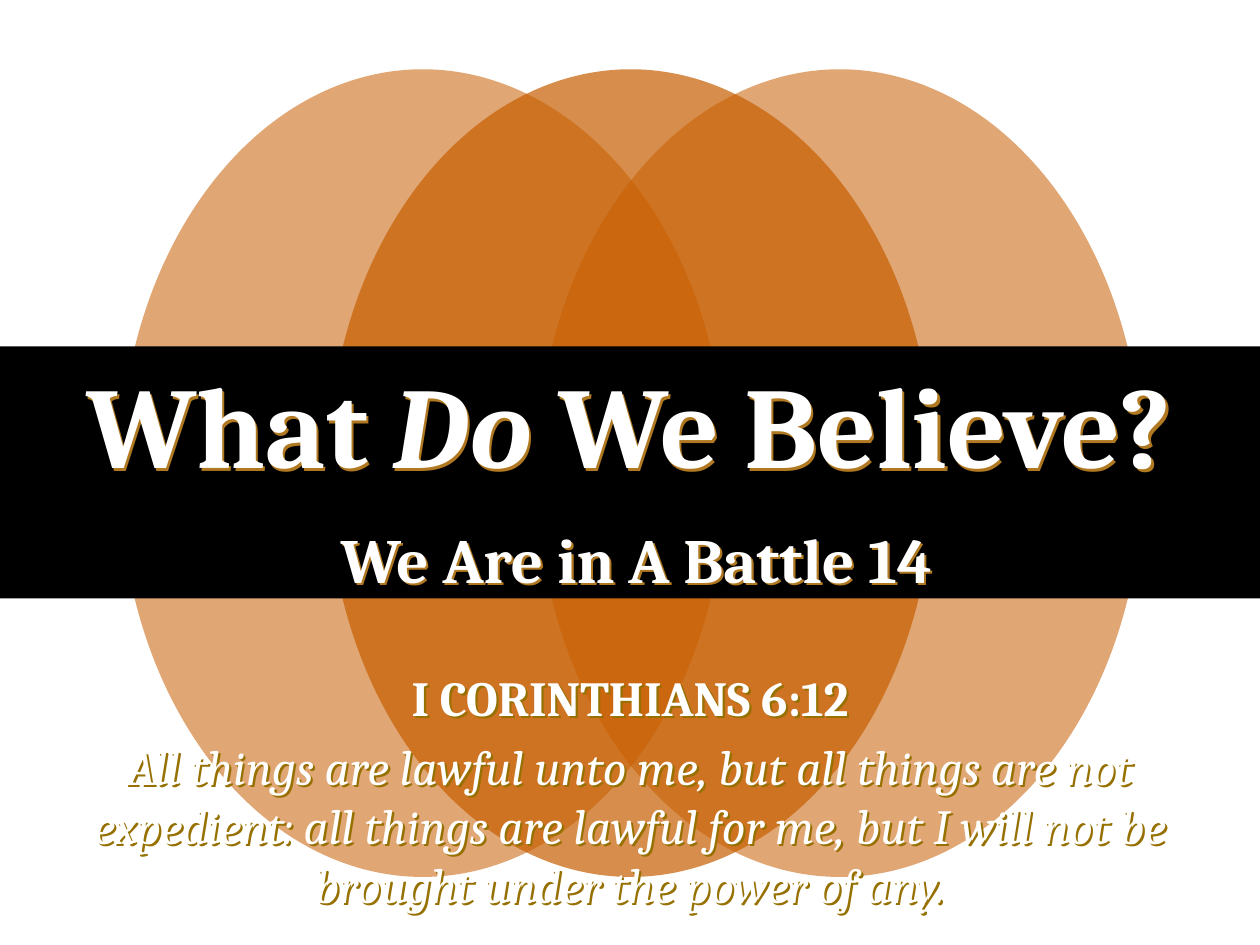
from lxml import etree
from pptx import Presentation
from pptx.dml.color import RGBColor
from pptx.enum import shapes, text
from pptx.oxml import ns
from pptx.util import Inches, Pt


def paint(fill, color, opacity=100):
    fill.solid()
    fill.fore_color.rgb = RGBColor.from_string(color)
    if opacity < 100:
        node = fill._xPr.find(ns.qn("a:solidFill"))[0]
        etree.SubElement(node, ns.qn("a:alpha"), val=str(opacity * 1000))


def place(box, left, top, width, height, shadow_color):
    """Position a placeholder in front and give its text a shadow."""
    box.left, box.top = Inches(left), Inches(top)
    box.width, box.height = Inches(width), Inches(height)
    page.shapes._spTree.append(box._element)
    effects = etree.SubElement(box._element.spPr, ns.qn("a:effectLst"))
    shadow = etree.SubElement(effects, ns.qn("a:outerShdw"),
                              dist="22000", dir="2700000", algn="ctr", rotWithShape="0")
    etree.SubElement(shadow, ns.qn("a:srgbClr"), val=shadow_color)
    box.text_frame.word_wrap = True
    box.text_frame.auto_size = text.MSO_AUTO_SIZE.NONE


deck = Presentation()
deck.slide_width, deck.slide_height = Inches(10), Inches(7.5)
page = deck.slides.add_slide(deck.slide_layouts[0])
paint(page.background.fill, "FFFFFF")

# Overlapping ellipses, the middle one in front
ellipses = page.shapes.add_group_shape()
for left, opacity in [(0.95, 55), (4.26, 55), (2.6, 70)]:
    ellipse = ellipses.shapes.add_shape(shapes.MSO_SHAPE.OVAL, Inches(left), Inches(0.55),
                                        Inches(4.81), Inches(6.41))
    ellipse.shadow.inherit = False
    ellipse.line.fill.background()
    paint(ellipse.fill, "C75E00", opacity)

# Black band
band = page.shapes.add_shape(shapes.MSO_SHAPE.RECTANGLE, 0, Inches(2.75), Inches(10), Inches(2))
band.shadow.inherit = False
band.line.fill.background()
paint(band.fill, "000000")

# Title and series line
title = page.shapes.title
place(title, 0.08, 3.08, 9.83, 1.51, "B07820")
title.text_frame.vertical_anchor = text.MSO_ANCHOR.MIDDLE
heading = title.text_frame.paragraphs[0]
for words, italic in [("What ", False), ("Do", True), (" We Believe?", False)]:
    span = heading.add_run()
    span.text = words
    span.font.italic = italic
series = title.text_frame.add_paragraph()
series.text = " We Are in A Battle 14"
series.space_before = Pt(20)
for para, size in [(heading, 65.7), (series, 36)]:
    para.line_spacing = 0.9
    para.font.size = Pt(size)
    para.font.bold = True

# Scripture reference and verse
scripture = page.placeholders[1]
place(scripture, 0.25, 5.25, 9.5, 0.83, "967000")
scripture.text_frame.vertical_anchor = text.MSO_ANCHOR.TOP
reference = scripture.text_frame.paragraphs[0]
reference.text = "I CORINTHIANS 6:12"
reference.space_before = Pt(0)
reference.font.bold = True
verse = scripture.text_frame.add_paragraph()
verse.text = ("All things are lawful unto me, but all things are not expedient: "
              "all things are lawful for me, but I will not be brought under the power of any.")
verse.space_before = Pt(5.6)
verse.font.bold = False
verse.font.italic = True
for para in (reference, verse):
    para.font.size = Pt(28)

# Shared text style
for para in (heading, series, reference, verse):
    para.alignment = text.PP_ALIGN.CENTER
    para.font.name = "Cambria"
    paint(para.font.fill, "FFFFFF")

deck.save("out.pptx")
